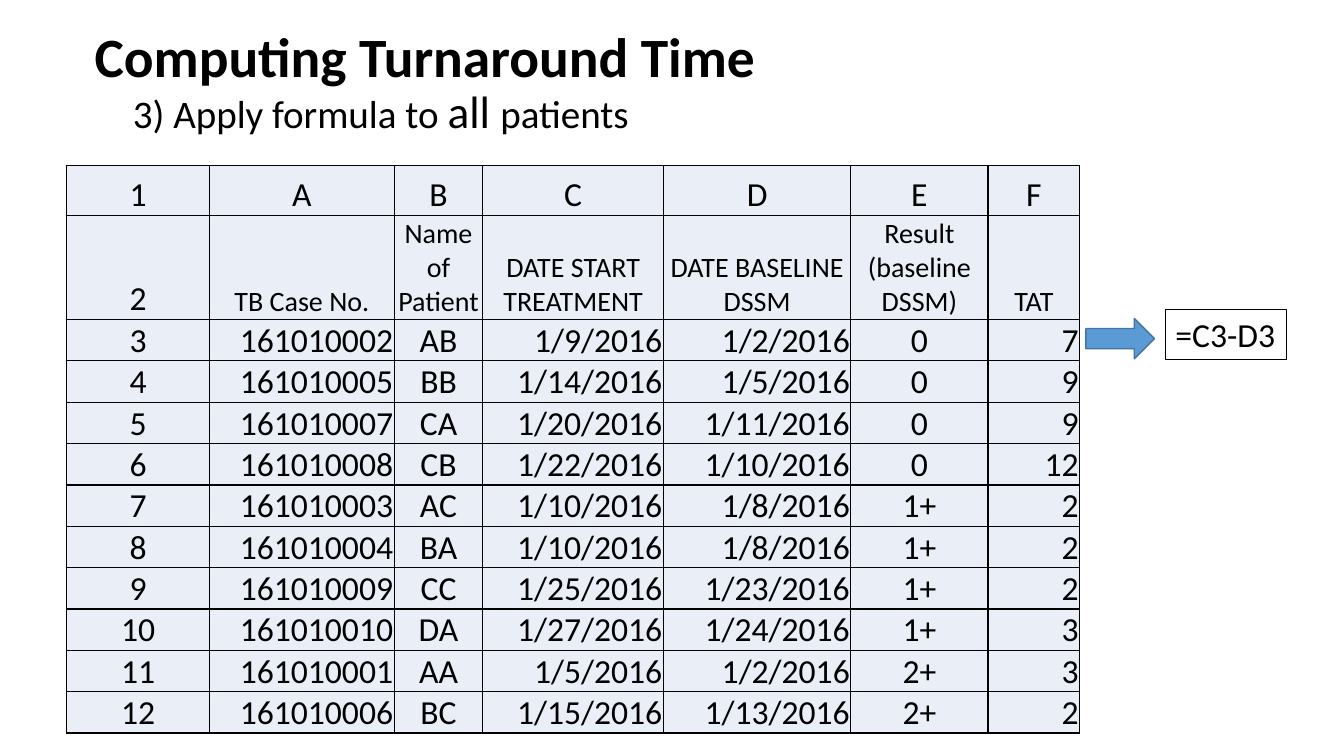
import dataclasses
import typing

import lxml.etree
import pptx
import pptx.dml.color
import pptx.enum.shapes
import pptx.enum.text
import pptx.oxml.ns
import pptx.slide
import pptx.table
import pptx.text.text
import pptx.util

Inches = pptx.util.Inches
Align = pptx.enum.text.PP_ALIGN
Anchor = pptx.enum.text.MSO_ANCHOR


@dataclasses.dataclass(frozen=True)
class Theme:
    font: str = "Calibri"
    ink: str = "000000"
    cell: str = "EAEFF7"
    arrow: str = "5B9BD5"
    edge: str = "43739E"
    title: float = 39.6
    step: float = 27.9
    stress: float = 32.4
    body: float = 24
    label: float = 20


class Column(typing.NamedTuple):
    letter: str
    label: str
    width: float
    align: Align


class Patient(typing.NamedTuple):
    case: str
    name: str
    start: str
    base: str
    result: str
    days: str


THEME = Theme()

COLUMNS = [
    Column("1", "2", 1.42, Align.CENTER),
    Column("A", "TB Case No.", 1.83, Align.RIGHT),
    Column("B", "Name of Patient", 0.88, Align.CENTER),
    Column("C", "DATE START TREATMENT", 1.79, Align.RIGHT),
    Column("D", "DATE BASELINE DSSM", 1.86, Align.RIGHT),
    Column("E", "Result (baseline DSSM)", 1.36, Align.CENTER),
    Column("F", "TAT", 0.91, Align.RIGHT),
]

PATIENTS = [
    Patient("161010002", "AB", "1/9/2016", "1/2/2016", "0", "7"),
    Patient("161010005", "BB", "1/14/2016", "1/5/2016", "0", "9"),
    Patient("161010007", "CA", "1/20/2016", "1/11/2016", "0", "9"),
    Patient("161010008", "CB", "1/22/2016", "1/10/2016", "0", "12"),
    Patient("161010003", "AC", "1/10/2016", "1/8/2016", "1+", "2"),
    Patient("161010004", "BA", "1/10/2016", "1/8/2016", "1+", "2"),
    Patient("161010009", "CC", "1/25/2016", "1/23/2016", "1+", "2"),
    Patient("161010010", "DA", "1/27/2016", "1/24/2016", "1+", "3"),
    Patient("161010001", "AA", "1/5/2016", "1/2/2016", "2+", "3"),
    Patient("161010006", "BC", "1/15/2016", "1/13/2016", "2+", "2"),
]


def paint(code: str) -> pptx.dml.color.RGBColor:
    return pptx.dml.color.RGBColor.from_string(code)


def style(run: pptx.text.text._Run, size: float, bold: bool = False) -> None:
    run.font.name = THEME.font
    run.font.size = pptx.util.Pt(size)
    run.font.bold = bold
    run.font.color.rgb = paint(THEME.ink)


def frame(cell: pptx.table._Cell) -> None:
    """Rule all four sides of a cell."""
    props = cell._tc.get_or_add_tcPr()
    tag = pptx.oxml.ns.qn
    for side in ("a:lnL", "a:lnR", "a:lnT", "a:lnB"):
        line = lxml.etree.SubElement(props, tag(side), w=str(pptx.util.Pt(1)))
        fill = lxml.etree.SubElement(line, tag("a:solidFill"))
        lxml.etree.SubElement(fill, tag("a:srgbClr"), val=THEME.ink)


def fill_cell(cell: pptx.table._Cell, text: str, size: float, align: Align) -> None:
    frame(cell)
    cell.fill.solid()
    cell.fill.fore_color.rgb = paint(THEME.cell)
    cell.margin_left = cell.margin_right = cell.margin_top = Inches(0.01)
    cell.margin_bottom = 0
    cell.vertical_anchor = Anchor.BOTTOM
    cell.text_frame.text = text
    line = cell.text_frame.paragraphs[0]
    line.alignment = align
    style(line.runs[0], size)


def add_title(slide: pptx.slide.Slide) -> None:
    box = slide.shapes.add_textbox(Inches(0.84), Inches(0.26), Inches(11.5), Inches(1.14))
    text = box.text_frame
    text.word_wrap = True
    text.vertical_anchor = Anchor.MIDDLE
    text.text = "Computing Turnaround Time"
    head = text.paragraphs[0]
    style(head.runs[0], THEME.title, bold=True)

    # Step line, set in from the title
    step = text.add_paragraph()
    step._p.get_or_add_pPr().set("marL", str(Inches(0.38)))
    for words, size in (
        ("3) Apply formula to ", THEME.step),
        ("all ", THEME.stress),
        ("patients", THEME.step),
    ):
        run = step.add_run()
        run.text = words
        style(run, size)
    for line in (head, step):
        line.line_spacing = 0.9


def add_sheet(slide: pptx.slide.Slide) -> None:
    heights = [0.5, 1.03] + [0.41] * len(PATIENTS)
    width = sum(col.width for col in COLUMNS)
    table = slide.shapes.add_table(
        len(heights), len(COLUMNS),
        Inches(0.66), Inches(1.64), Inches(width), Inches(sum(heights)),
    ).table
    for row, height in zip(table.rows, heights):
        row.height = Inches(height)

    for c, col in enumerate(COLUMNS):
        table.columns[c].width = Inches(col.width)
        # Sheet letters, then column labels
        fill_cell(table.cell(0, c), col.letter, THEME.body, Align.CENTER)
        size = THEME.label if c else THEME.body
        fill_cell(table.cell(1, c), col.label, size, Align.CENTER)
        # Numbered patient rows
        for r, patient in enumerate(PATIENTS, start=2):
            values = (str(r + 1), *patient)
            fill_cell(table.cell(r, c), values[c], THEME.body, col.align)


def add_note(slide: pptx.slide.Slide) -> None:
    # Formula box
    box = slide.shapes.add_textbox(Inches(11.56), Inches(3.07), Inches(1.2), Inches(0.5))
    box.line.color.rgb = paint(THEME.ink)
    box.line.width = pptx.util.Pt(0.75)
    box.text_frame.word_wrap = False
    box.text_frame.auto_size = pptx.enum.text.MSO_AUTO_SIZE.SHAPE_TO_FIT_TEXT
    box.text_frame.text = "=C3-D3"
    style(box.text_frame.paragraphs[0].runs[0], THEME.body)

    # Arrow from the first result
    arrow = slide.shapes.add_shape(
        pptx.enum.shapes.MSO_SHAPE.RIGHT_ARROW,
        Inches(10.77), Inches(3.16), Inches(0.68), Inches(0.4),
    )
    arrow.shadow.inherit = False
    arrow.fill.solid()
    arrow.fill.fore_color.rgb = paint(THEME.arrow)
    arrow.line.color.rgb = paint(THEME.edge)
    arrow.line.width = pptx.util.Pt(1)


def main() -> None:
    deck = pptx.Presentation()
    deck.slide_width = Inches(13.33)
    deck.slide_height = Inches(7.5)
    slide = deck.slides.add_slide(deck.slide_layouts[6])
    add_title(slide)
    add_sheet(slide)
    add_note(slide)
    deck.save("out.pptx")


if __name__ == "__main__":
    main()
